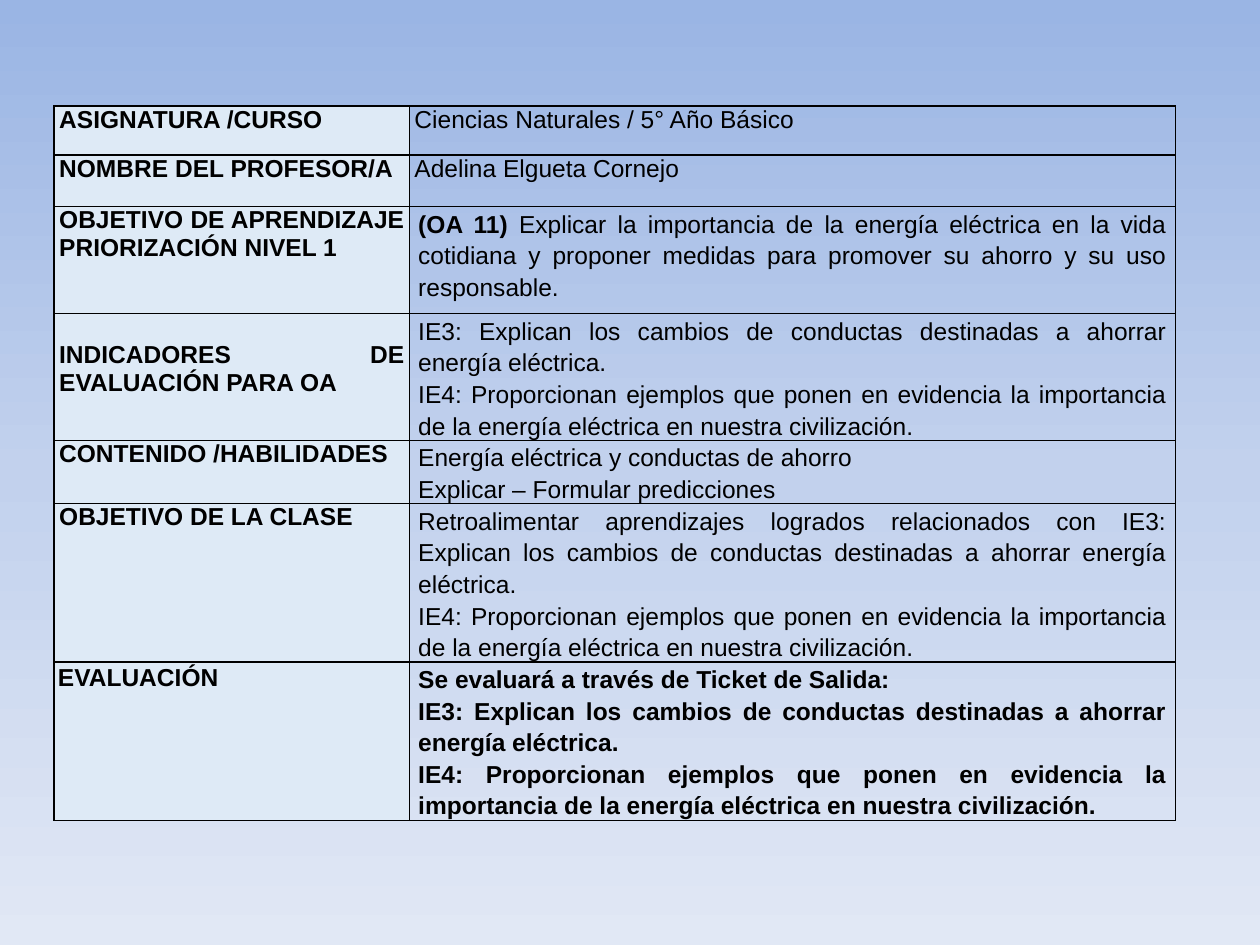
from copy import deepcopy
from lxml.etree import SubElement
from pptx import Presentation
from pptx.dml.color import RGBColor as RGB
from pptx.enum.text import PP_ALIGN as AL
from pptx.oxml.ns import qn
from pptx.util import Inches as In, Pt

C = {"text": "000000", "border": "000000", "label": "DEEAF6",
     "sky_top": "9AB5E4", "sky_mid": "C2D1ED", "sky_end": "E1E8F5"}
LABEL_COL, DETAIL_COL = 2.82, 6.08
IE3 = "IE3: Explican los cambios de conductas destinadas a ahorrar energía eléctrica."
IE4 = ("IE4: Proporcionan ejemplos que ponen en evidencia la importancia "
       "de la energía eléctrica en nuestra civilización.")
OA = ("Explicar la importancia de la energía eléctrica en la vida cotidiana "
      "y proponer medidas para promover su ahorro y su uso responsable.")

# Each row: height, label, label format, paragraphs, detail format
plain = dict(side=0.04)
loose = dict(side=0.07, spacing=1.15)
ROWS = [
    (0.39, "ASIGNATURA /CURSO", {}, ["Ciencias Naturales / 5° Año Básico"], plain),
    (0.41, "NOMBRE DEL PROFESOR/A", {}, ["Adelina Elgueta Cornejo"], plain),
    (0.85, "OBJETIVO DE APRENDIZAJE PRIORIZACIÓN NIVEL 1", {}, [OA],
     dict(loose, lead="(OA 11) ")),
    (1.0, "INDICADORES DE EVALUACIÓN PARA OA", dict(top=0.22), [IE3, IE4], loose),
    (0.5, "CONTENIDO /HABILIDADES", {},
     ["Energía eléctrica y conductas de ahorro", "Explicar – Formular predicciones"], loose),
    (1.25, "OBJETIVO DE LA CLASE", {},
     ["Retroalimentar aprendizajes logrados relacionados con " + IE3, IE4], loose),
    (1.25, "EVALUACIÓN", dict(side=0.03, top=0.02),
     ["Se evaluará a través de Ticket de Salida:", IE3, IE4], dict(loose, bold=True)),
]


def write(cell, paragraphs, bold=False, lead="", side=0.04, top=0, spacing=None):
    cell.margin_left = cell.margin_right = In(side)
    cell.margin_top, cell.margin_bottom = In(top), 0
    tf = cell.text_frame
    for i, text in enumerate(paragraphs):
        p = tf.paragraphs[0] if i == 0 else tf.add_paragraph()
        p.alignment = AL.JUSTIFY
        if spacing:
            p.line_spacing = spacing
        for part, strong in ((lead, True), (text, bold)):
            if part:
                r = p.add_run()
                r.text = part
                r.font.name, r.font.size, r.font.bold = "Arial", Pt(14), strong
                r.font.color.rgb = RGB.from_string(C["text"])


def outline(cell):
    tcPr = cell._tc.get_or_add_tcPr()
    for i, side in enumerate(("lnL", "lnR", "lnT", "lnB")):
        ln = tcPr.makeelement(qn("a:" + side), {"w": str(Pt(1))})
        fill = SubElement(ln, qn("a:solidFill"))
        SubElement(fill, qn("a:srgbClr"), val=C["border"])
        tcPr.insert(i, ln)  # borders come before the cell fill


prs = Presentation()
prs.slide_width, prs.slide_height = In(10), In(7.5)
s = prs.slides.add_slide(prs.slide_layouts[6])

# Background: vertical three-stop gradient
bg = s.background.fill
bg.gradient()
bg.gradient_angle = 270
stops = s._element.find(".//" + qn("a:gsLst"))
stops.insert(1, deepcopy(stops[0]))
for stop, pos, name in zip(bg.gradient_stops, (0, 0.5, 1), ("sky_top", "sky_mid", "sky_end")):
    stop.position = pos
    stop.color.rgb = RGB.from_string(C[name])

# Lesson plan table
height = sum(row[0] for row in ROWS)
table = s.shapes.add_table(len(ROWS), 2, In(0.43), In(0.84),
                           In(LABEL_COL + DETAIL_COL), In(height)).table
table.first_row = table.horz_banding = False
table.columns[0].width, table.columns[1].width = In(LABEL_COL), In(DETAIL_COL)
for i, (h, label, label_fmt, details, detail_fmt) in enumerate(ROWS):
    table.rows[i].height = In(h)
    left, right = table.cell(i, 0), table.cell(i, 1)
    write(left, [label], bold=True, **label_fmt)
    write(right, details, **detail_fmt)
    left.fill.solid()
    left.fill.fore_color.rgb = RGB.from_string(C["label"])
    right.fill.background()
    outline(left)
    outline(right)

prs.save("out.pptx")
